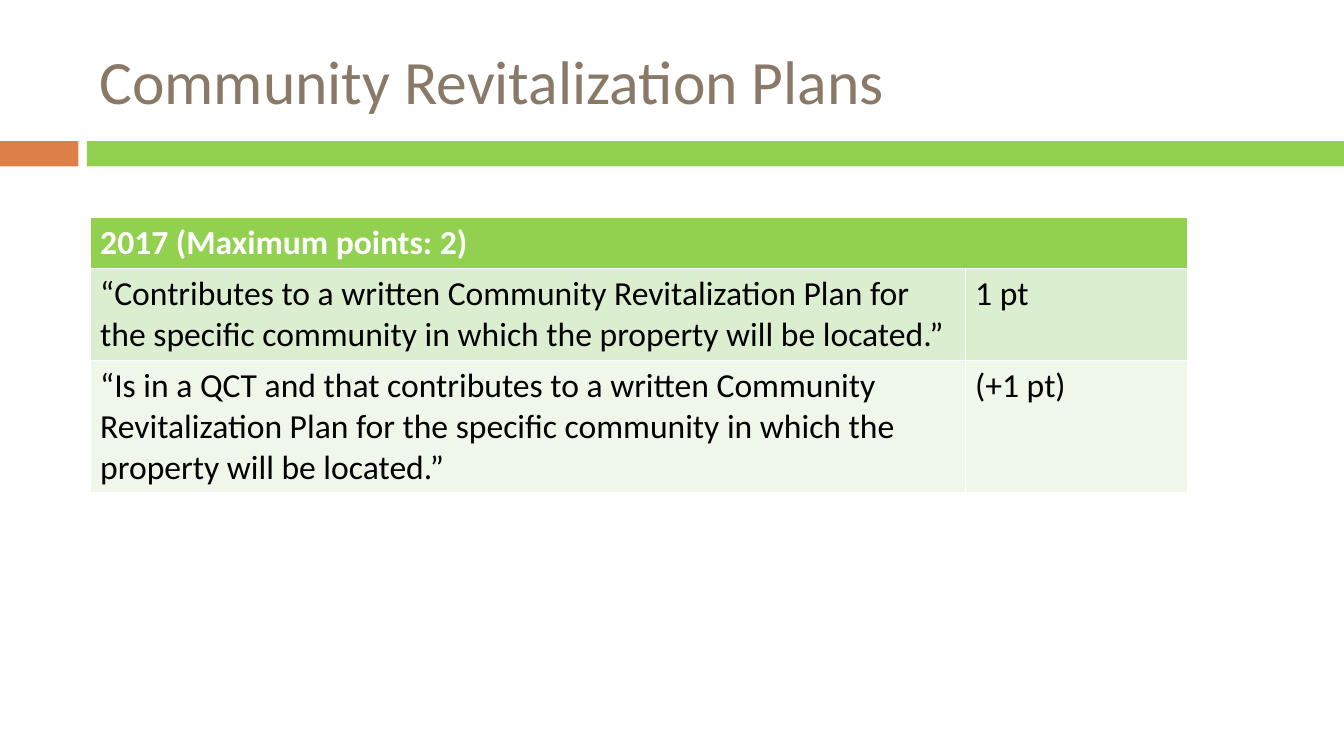
from pptx import Presentation
from pptx.dml.color import RGBColor
from pptx.enum.shapes import MSO_SHAPE
from pptx.enum.text import MSO_ANCHOR
from pptx.util import Pt

RECT = MSO_SHAPE.RECTANGLE
MIDDLE = MSO_ANCHOR.MIDDLE
COLORS = {
    "orange": "DD8047",
    "green": "92D050",
    "title": "8A7967",
    "white": "FFFFFF",
    "black": "000000",
    "light": "DCEED0",
    "pale": "EEF7E9",
}


def color(name):
    return RGBColor.from_string(COLORS[name])


def write(frame, text, size, name, bold=False):
    frame.text = text
    font = frame.paragraphs[0].font
    font.name = "Calibri"
    font.size = Pt(size)
    font.bold = bold
    font.color.rgb = color(name)


deck = Presentation()
deck.slide_width = Pt(960)
deck.slide_height = Pt(540)
slide = deck.slides.add_slide(deck.slide_layouts[6])

for left, width, name in [(0, 56, "orange"), (62, 898, "green")]:
    bar = slide.shapes.add_shape(RECT, Pt(left), Pt(100.8), Pt(width), Pt(18))
    bar.shadow.inherit = False
    bar.fill.solid()
    bar.fill.fore_color.rgb = color(name)
    bar.line.fill.background()

title = slide.shapes.add_textbox(Pt(64), Pt(18), Pt(856), Pt(78)).text_frame
title.word_wrap = True
title.vertical_anchor = MIDDLE
write(title, "Community Revitalization Plans", 44, "title")

rows = [
    (36, "green", "white", ["2017 (Maximum points: 2)"]),
    (65.6, "light", "black", [
        "“Contributes to a written Community Revitalization Plan for "
        "the specific community in which the property will be located.”",
        "1 pt"]),
    (94.8, "pale", "black", [
        "“Is in a QCT and that contributes to a written Community "
        "Revitalization Plan for the specific community in which the "
        "property will be located.”",
        "(+1 pt)"]),
]
high = sum(row[0] for row in rows)
table = slide.shapes.add_table(
    len(rows), 2, Pt(64.4), Pt(155.6), Pt(784), Pt(high)).table
table.columns[0].width = Pt(625)
table.columns[1].width = Pt(159)
table.cell(0, 0).merge(table.cell(0, 1))

for r, (height, fill, ink, texts) in enumerate(rows):
    table.rows[r].height = Pt(height)
    for cell in table.rows[r].cells:
        cell.fill.solid()
        cell.fill.fore_color.rgb = color(fill)
    for c, text in enumerate(texts):
        write(table.cell(r, c).text_frame, text, 24, ink, r == 0)

deck.save("out.pptx")
